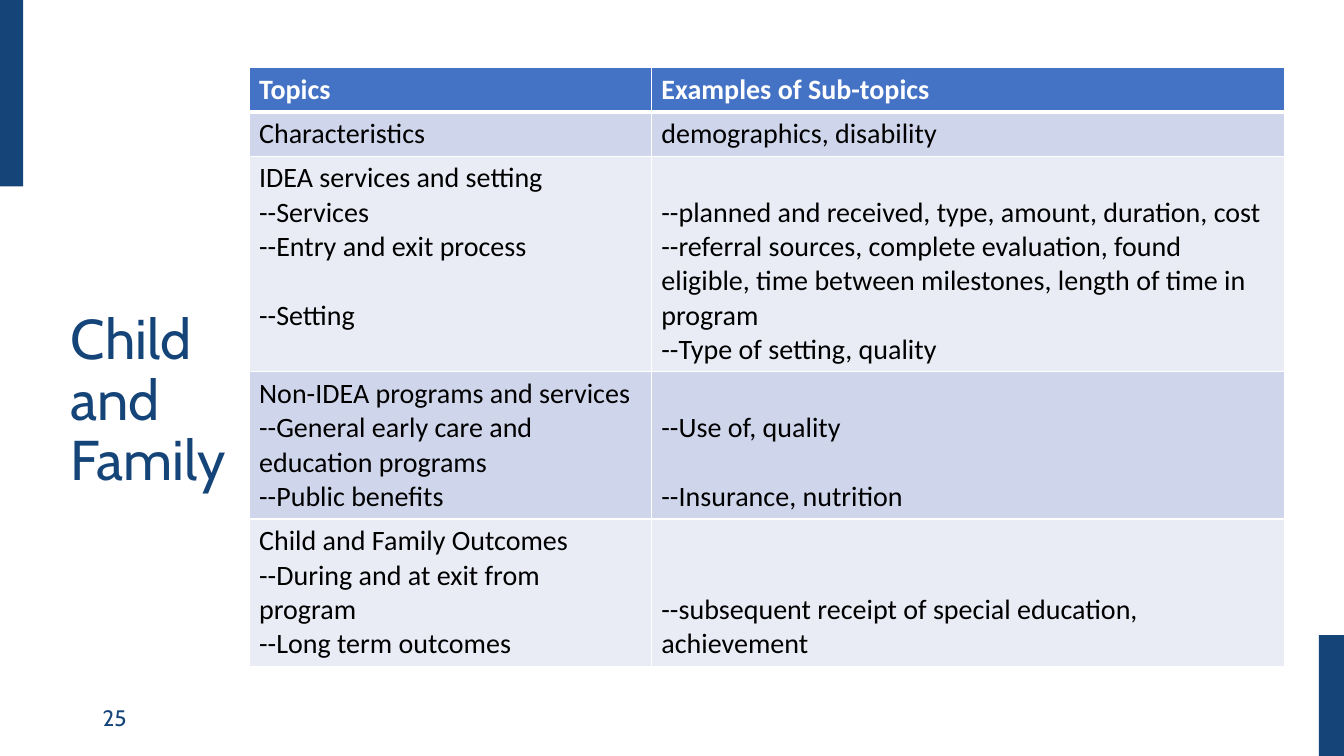
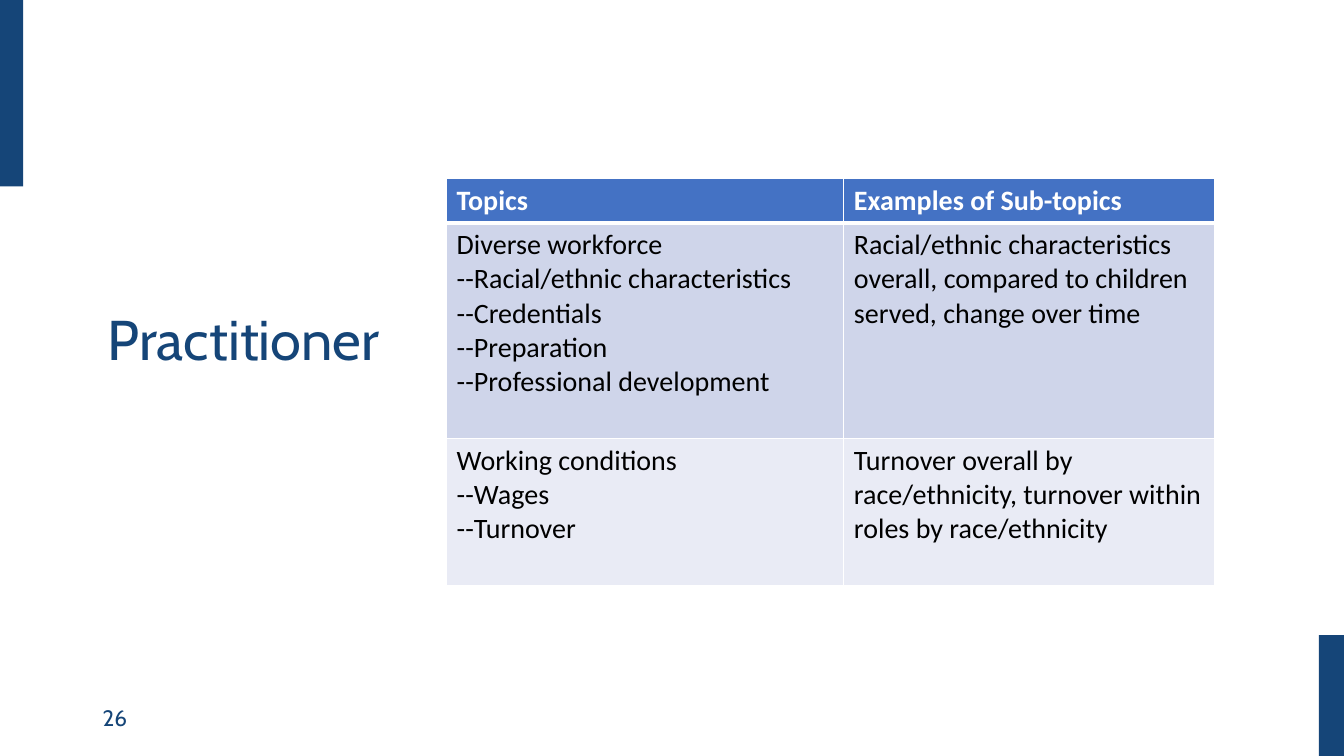
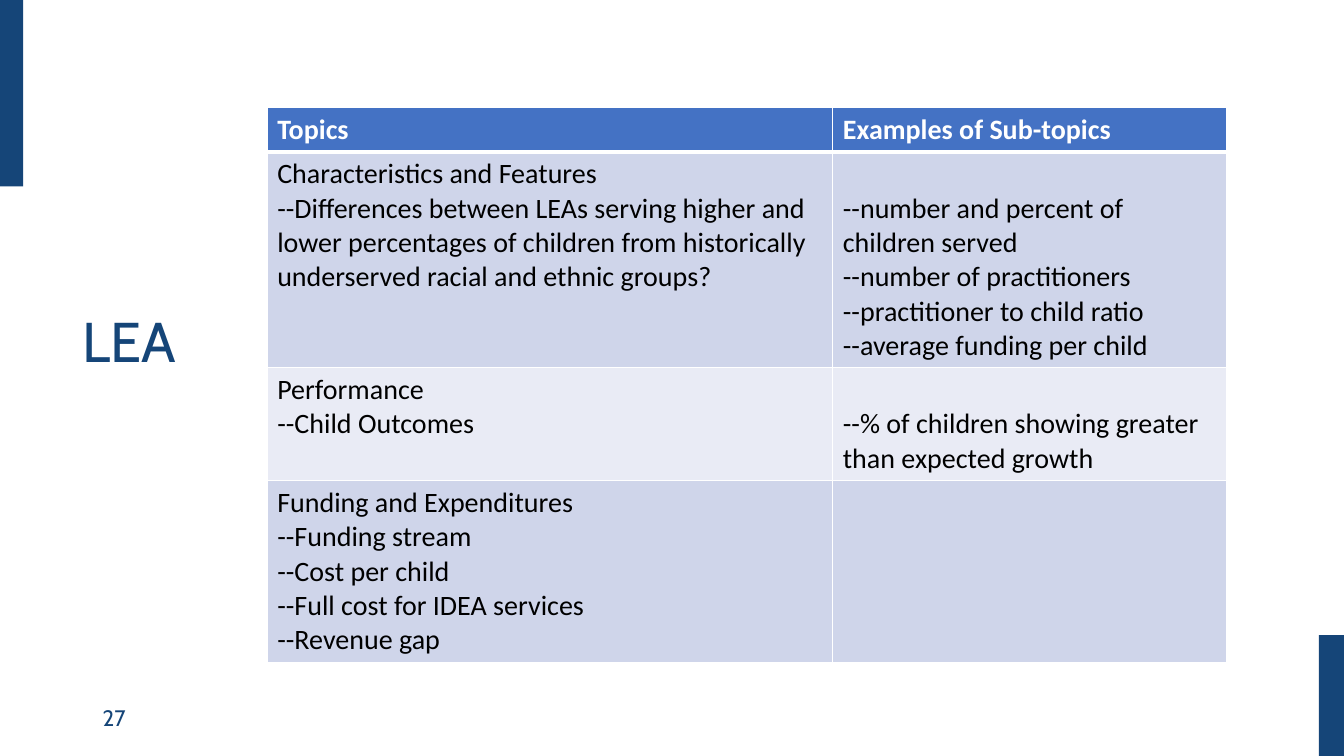
from lxml.etree import SubElement
from pptx import Presentation
from pptx.dml.color import RGBColor
from pptx.enum.shapes import MSO_SHAPE as SHAPE
from pptx.enum.text import MSO_ANCHOR as ANCHOR, MSO_AUTO_SIZE as AUTO, PP_ALIGN as ALIGN
from pptx.oxml.ns import qn
from pptx.util import Inches, Pt

NAVY = RGBColor(0x15, 0x45, 0x78)
BLUE = RGBColor(0x44, 0x72, 0xC4)
DARK_BAND = RGBColor(0xCF, 0xD5, 0xEA)
LIGHT_BAND = RGBColor(0xE9, 0xEB, 0xF5)
BLACK = RGBColor(0, 0, 0)
WHITE = RGBColor(0xFF, 0xFF, 0xFF)
TITLE_FONT, TABLE_FONT = "Cabin", "Calibri"
LINE, PAD = 0.34, 0.05
HEADER = (1, ["Topics"], ["Examples of Sub-topics"])


def write(p, text, size=20, font=TABLE_FONT, color=BLACK, bold=False):
    r = p.add_run()
    r.text = text
    r.font.size, r.font.name, r.font.bold = Pt(size), font, bold
    r.font.color.rgb = color


def set_borders(cell, top=1, bottom=1):
    tc_pr = cell._tc.get_or_add_tcPr()
    for i, (side, width) in enumerate(zip("LRTB", (1, 1, top, bottom))):
        ln = SubElement(tc_pr, qn(f"a:ln{side}"), w=str(Pt(width)))
        fill = SubElement(ln, qn("a:solidFill"))
        SubElement(fill, qn("a:srgbClr"), val=str(WHITE))
        tc_pr.insert(i, ln)


class Deck:
    def __init__(self):
        self.prs = Presentation()
        self.prs.slide_width, self.prs.slide_height = Inches(13.33), Inches(7.5)

    def add_slide(self, number):
        self.s = self.prs.slides.add_slide(self.prs.slide_layouts[5])
        self.band(0, 0, 0.23, 1.85)
        self.band(13.08, 6.3, 0.25, 1.2)
        self.number(number)

    def band(self, *box):
        sp = self.s.shapes.add_shape(SHAPE.RECTANGLE, *map(Inches, box))
        sp.shadow.inherit = False
        sp.fill.solid()
        sp.fill.fore_color.rgb = NAVY
        sp.line.fill.background()

    def number(self, number):
        box = map(Inches, (0.92, 6.92, 3, 0.4))
        tf = self.s.shapes.add_textbox(*box).text_frame
        tf.word_wrap = True
        tf.vertical_anchor = ANCHOR.MIDDLE
        write(tf.paragraphs[0], str(number), size=16, font=TITLE_FONT, color=NAVY)

    def title(self, text, box):
        sp = self.s.shapes.title
        sp.left, sp.top, sp.width, sp.height = map(Inches, box)
        tf = sp.text_frame
        tf.word_wrap, tf.auto_size = True, AUTO.NONE
        tf.vertical_anchor = ANCHOR.BOTTOM
        p = tf.paragraphs[0]
        p.alignment, p.line_spacing = ALIGN.LEFT, 0.9
        write(p, text, size=40, font=TITLE_FONT, color=NAVY)

    def cell(self, cell, lines, row):
        header = row == 0
        cell.fill.solid()
        cell.fill.fore_color.rgb = BLUE if header else DARK_BAND if row % 2 else LIGHT_BAND
        set_borders(cell, top=3 if row == 1 else 1, bottom=3 if header else 1)
        tf, gap, p = cell.text_frame, 0, None
        for text in lines:
            if not text:
                gap += 1
                continue
            if p is None:
                p = tf.paragraphs[0]
                cell.margin_top = Inches(PAD + gap * LINE)
            else:
                p = tf.add_paragraph()
                p.space_before = Inches(gap * LINE)
            write(p, text, color=WHITE if header else BLACK, bold=header)
            gap = 0

    def table(self, left, top, widths, rows):
        rows = [HEADER, *rows]
        heights = [2 * PAD + LINE * count for count, *_ in rows]
        box = map(Inches, (left, top, sum(widths), sum(heights)))
        table = self.s.shapes.add_table(len(rows), len(widths), *box).table
        for col, width in zip(table.columns, widths):
            col.width = Inches(width)
        for i, (height, (_, *cells)) in enumerate(zip(heights, rows)):
            table.rows[i].height = Inches(height)
            for j, lines in enumerate(cells):
                self.cell(table.cell(i, j), lines, i)


SLIDES = [
    ("Child and Family", (0.6, 2.59, 1.84, 2.35), (2.47, 0.67), (3.99, 6.28), [
        (1, ["Characteristics"], ["demographics, disability"]),
        (6, ["IDEA services and setting", "--Services", "--Entry and exit process",
             "", "--Setting"],
            ["", "--planned and received, type, amount, duration, cost",
             "--referral sources, complete evaluation, found eligible, "
             "time between milestones, length of time in program",
             "--Type of setting, quality"]),
        (4, ["Non-IDEA programs and services",
             "--General early care and education programs", "--Public benefits"],
            ["", "--Use of, quality", "", "--Insurance, nutrition"]),
        (4, ["Child and Family Outcomes", "--During and at exit from program",
             "--Long term outcomes"],
            ["", "", "--subsequent receipt of special education, achievement"]),
    ]),
    ("Practitioner", (0.97, 2.4, 4.3, 1.35), (4.43, 1.77), (3.94, 3.68), [
        (6, ["Diverse workforce", "--Racial/ethnic characteristics", "--Credentials",
             "--Preparation", "--Professional development"],
            ["Racial/ethnic characteristics overall, compared to children served, "
             "change over time"]),
        (4, ["Working conditions", "--Wages", "--Turnover"],
            ["Turnover overall by race/ethnicity, turnover within roles by race/ethnicity"]),
    ]),
    ("LEA", (0.72, 2.42, 4.3, 1.35), (2.65, 1.07), (5.61, 3.91), [
        (6, ["Characteristics and Features",
             "--Differences between LEAs serving higher and lower percentages of "
             "children from historically underserved racial and ethnic groups?"],
            ["", "--number and percent of children served", "--number of practitioners",
             "--practitioner to child ratio", "--average funding per child"]),
        (3, ["Performance", "--Child Outcomes"],
            ["", "--% of children showing greater than expected growth"]),
        (5, ["Funding and Expenditures", "--Funding stream", "--Cost per child",
             "--Full cost for IDEA services", "--Revenue gap"], []),
    ]),
]


def main():
    deck = Deck()
    for number, (title, box, corner, widths, rows) in enumerate(SLIDES, 25):
        deck.add_slide(number)
        deck.title(title, box)
        deck.table(*corner, widths, rows)
    deck.prs.save("out.pptx")


if __name__ == "__main__":
    main()
